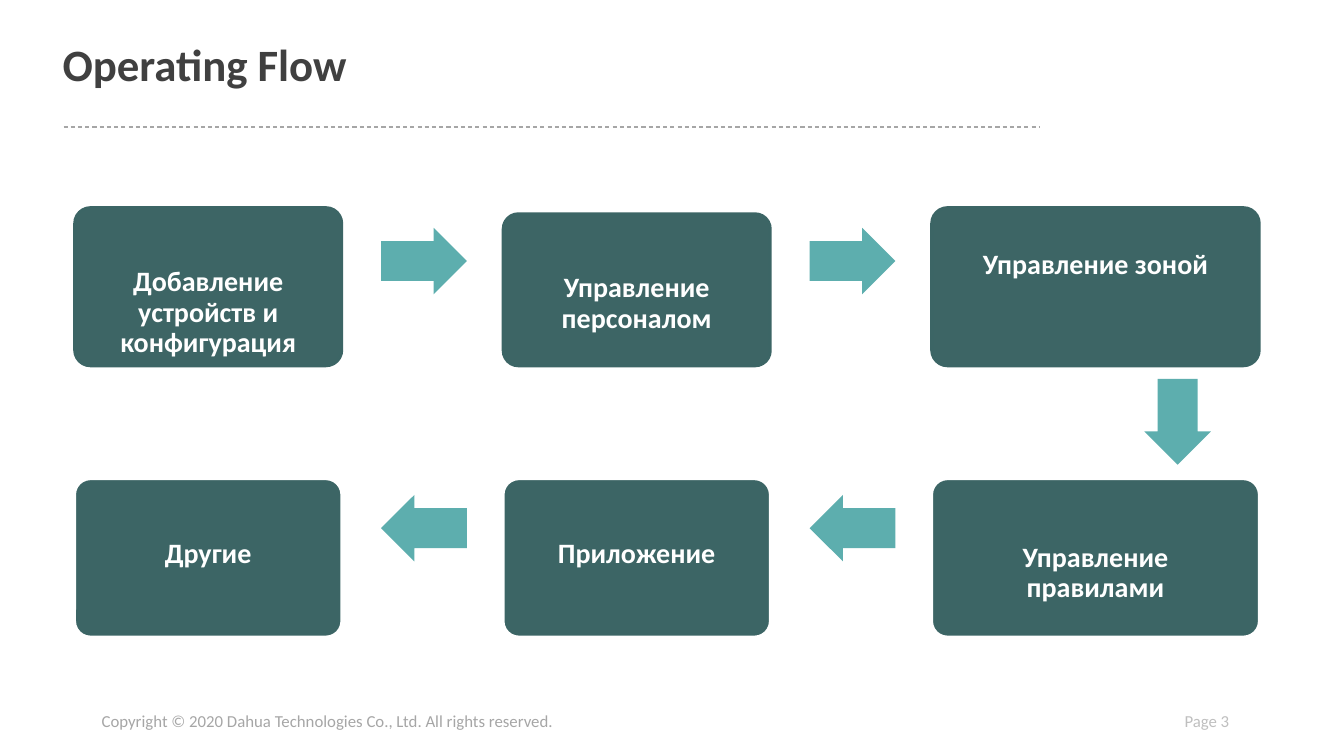
from pptx import Presentation
from pptx.dml.color import RGBColor as Rgb
from pptx.enum.dml import MSO_LINE as Dash
from pptx.enum.shapes import MSO_CONNECTOR as Link, MSO_SHAPE as Kind
from pptx.enum.text import MSO_ANCHOR as Anchor, PP_ALIGN as Align
from pptx.oxml.ns import qn
from pptx.util import Inches, Pt
from lxml.etree import SubElement

HUES = {
    "box": "3D6565",
    "edge": "3C6565",
    "arrow": "5DAEAE",
    "white": "FFFFFF",
    "title": "404040",
    "rule": "A6A6A6",
    "page": "BFBFBF",
}
FONT = "Calibri"


def hue(name):
    return Rgb.from_string(HUES[name])


def put(frame, text, size=12, color="rule", bold=False, align=Align.LEFT,
        anchor=Anchor.TOP, wrap=True, space=1.0, pad=(0.1, 0.05, 0.1, 0.05)):
    """Write text into a frame; pad is left, top, right, bottom in inches."""
    frame.word_wrap = wrap
    frame.vertical_anchor = anchor
    (frame.margin_left, frame.margin_top,
     frame.margin_right, frame.margin_bottom) = map(Inches, pad)
    frame.text = text
    par = frame.paragraphs[0]
    par.alignment = align
    par.line_spacing = space
    font = par.runs[0].font
    font.name, font.size, font.bold = FONT, Pt(size), bold
    font.color.rgb = hue(color)


class Deck:
    """Holds the slide; lengths are columns and rows of a 0.1 inch grid."""

    cell = Inches(0.1)

    def __init__(self):
        self.file = Presentation()
        self.file.slide_width = Inches(13.33)
        self.file.slide_height = Inches(7.5)
        self.slide = self.file.slides.add_slide(self.file.slide_layouts[5])
        self.shapes = self.slide.shapes

    def grid(self, *cells):
        return [round(n * self.cell) for n in cells]

    def title(self, text, *area):
        head = self.shapes.title
        head.left, head.top, head.width, head.height = self.grid(*area)
        put(head.text_frame, text, size=32, color="title", bold=True,
            anchor=Anchor.MIDDLE)

    def note(self, text, *area, **style):
        put(self.shapes.add_textbox(*self.grid(*area)).text_frame,
            text, **style)

    def rule(self, *ends):
        rule = self.shapes.add_connector(Link.STRAIGHT, *self.grid(*ends))
        rule.line.color.rgb = hue("rule")
        rule.line.width = Pt(0.75)
        rule.line.dash_style = Dash.DASH
        SubElement(rule._element.spPr, qn("a:effectLst"))

    def shape(self, kind, area, fill, *bends):
        shape = self.shapes.add_shape(kind, *self.grid(*area))
        shape.shadow.inherit = False
        shape.fill.solid()
        shape.fill.fore_color.rgb = hue(fill)
        for i, bend in enumerate(bends):
            shape.adjustments[i] = bend
        return shape

    def step(self, text, area, drop, fill, edge):
        box = self.shape(Kind.ROUNDED_RECTANGLE, area, fill, 0.1)
        box.line.color.rgb = hue(edge)
        box.line.width = Pt(2)
        put(box.text_frame, text, size=20, color="white", bold=True,
            align=Align.CENTER, space=0.9, pad=(0.15, drop, 0.15, 0))

    def arrow(self, kind, *area):
        self.shape(kind, area, "arrow", 0.6, 0.5).line.fill.background()


def main():
    deck = Deck()

    # Heading and footer
    deck.title("Operating Flow", 5.2, 3, 106.5, 6.6)
    deck.rule(6.3, 12.6, 103.1, 12.6)
    deck.note("Copyright © 2020 Dahua Technologies Co., Ltd. "
              "All rights reserved.", 9.1, 70, 66.7, 3)
    deck.note("Page 3", 116.5, 70, 7.7, 3, color="page", wrap=False)

    # Steps: label, top, height and text drop, by row from left to right
    rows = [
        ("box", "edge", [
            ("Добавление устройств и конфигурация", 20.6, 15.7, 0.55),
            ("Управление персоналом", 21.2, 15.1, 0.55),
            ("Управление зоной", 20.6, 15.7, 0.38)]),
        ("edge", "white", [
            ("Другие", 47.5, 15.7, 0.55),
            ("Приложение", 47.5, 15.7, 0.55),
            ("Управление правилами", 47.5, 15.7, 0.59)]),
    ]
    first, pitch = 7.4, 42.5
    wide = (26.5, 26.5, 32.5)
    for fill, edge, steps in rows:
        for col, (text, top, high, drop) in enumerate(steps):
            area = (first + col * pitch, top, wide[col], high)
            deck.step(text, area, drop, fill, edge)

    # Arrows: right along the top, down, then left along the bottom
    for kind, top in ((Kind.RIGHT_ARROW, 22.6), (Kind.LEFT_ARROW, 49.1)):
        for col in range(2):
            deck.arrow(kind, 37.8 + col * pitch, top, 8.5, 6.6)
    deck.arrow(Kind.DOWN_ARROW, 113.5, 37.6, 6.6, 8.5)

    deck.file.save("out.pptx")


if __name__ == "__main__":
    main()
